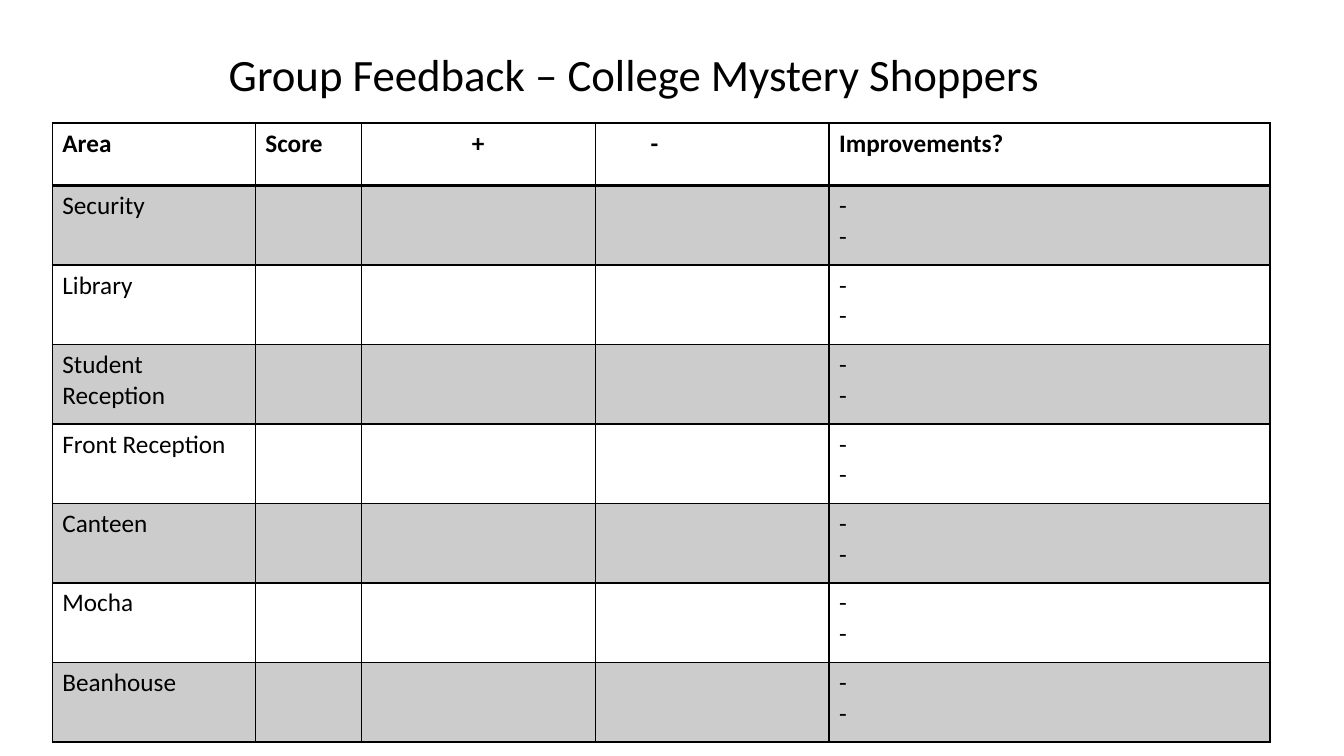
"""Build the mystery shopper feedback slide with its scoring table."""
from dataclasses import dataclass

from lxml.etree import SubElement as Sub
from pptx import Presentation
from pptx.dml.color import RGBColor as RGB
from pptx.enum.text import MSO_ANCHOR as Anchor, PP_ALIGN as Align
from pptx.oxml.ns import qn
from pptx.slide import Slide
from pptx.table import _Cell as Cell
from pptx.text.text import TextFrame
from pptx.util import Pt

COLORS = {"ink": "000000", "band": "CCCCCC"}
FONT = "Calibri"
AREAS = ["Security", "Library", "Student Reception", "Front Reception",
         "Canteen", "Mocha", "Beanhouse"]
HEADER_HEIGHT, ROW_HEIGHT = 44.6, 56.8
THIN, THICK = 1, 2


@dataclass(frozen=True)
class Column:
    """A table column: heading, width, body text and heading placement."""
    heading: str
    width: float
    body: str = ""
    align: Align = Align.LEFT
    indent: float = 0


COLUMNS = [
    Column("Area", 145),
    Column("Score", 75.7),
    Column("+", 167.1, align=Align.CENTER),
    Column("-", 167.1, indent=32.4),
    Column("Improvements?", 315, body="-\n-"),
]


def format_text(tf: TextFrame, size: float, bold: bool, align: Align) -> None:
    """Format every paragraph and run of a text frame."""
    for p in tf.paragraphs:
        p.alignment = align
        for r in p.runs:
            r.font.name, r.font.size, r.font.bold = FONT, Pt(size), bold
            r.font.color.rgb = RGB.from_string(COLORS["ink"])


def add_borders(cell: Cell, top: float, bottom: float) -> None:
    """Draw the four borders of a cell."""
    tc_pr = cell._tc.get_or_add_tcPr()
    for side, width in (("L", THIN), ("R", THIN), ("T", top), ("B", bottom)):
        ln = Sub(tc_pr, qn(f"a:ln{side}"), w=str(Pt(width)))
        fill = Sub(ln, qn("a:solidFill"))
        Sub(fill, qn("a:srgbClr"), val=COLORS["ink"])


def add_title(s: Slide, text: str) -> None:
    """Place the slide title."""
    sp = s.shapes.title
    sp.left, sp.top, sp.width, sp.height = Pt(156.2), Pt(21.6), Pt(648), Pt(67)
    tf = sp.text_frame
    tf.text = text
    tf.vertical_anchor = Anchor.MIDDLE
    tf.paragraphs[0].line_spacing = 0.9
    format_text(tf, 32, False, Align.LEFT)


def fill_cell(cell: Cell, row: int, column: Column) -> None:
    """Write and style one cell of the feedback table."""
    header = row == 0
    if header:
        cell.text_frame.text = column.heading
        cell.margin_left = Pt(7.2 + column.indent)
    else:
        is_area = column is COLUMNS[0]
        cell.text_frame.text = AREAS[row - 1] if is_area else column.body
    format_text(cell.text_frame, 18, header,
                column.align if header else Align.LEFT)
    add_borders(cell, THICK if row == 1 else THIN, THICK if header else THIN)
    if row % 2:
        cell.fill.solid()
        cell.fill.fore_color.rgb = RGB.from_string(COLORS["band"])
    else:
        cell.fill.background()


def add_feedback_table(s: Slide) -> None:
    """Add the table with one row per college area."""
    heights = [HEADER_HEIGHT] + [ROW_HEIGHT] * len(AREAS)
    table = s.shapes.add_table(
        len(heights), len(COLUMNS), Pt(37.4), Pt(87.9),
        Pt(sum(c.width for c in COLUMNS)), Pt(sum(heights))).table
    table.first_row = table.horz_banding = False
    for i, column in enumerate(COLUMNS):
        table.columns[i].width = Pt(column.width)
    for row, height in enumerate(heights):
        table.rows[row].height = Pt(height)
        for i, column in enumerate(COLUMNS):
            fill_cell(table.cell(row, i), row, column)


def main() -> None:
    """Create and save the presentation."""
    prs = Presentation()
    prs.slide_width, prs.slide_height = Pt(960), Pt(540)
    s = prs.slides.add_slide(prs.slide_layouts[5])
    add_title(s, "Group Feedback – College Mystery Shoppers")
    add_feedback_table(s)
    prs.save("out.pptx")


if __name__ == "__main__":
    main()
